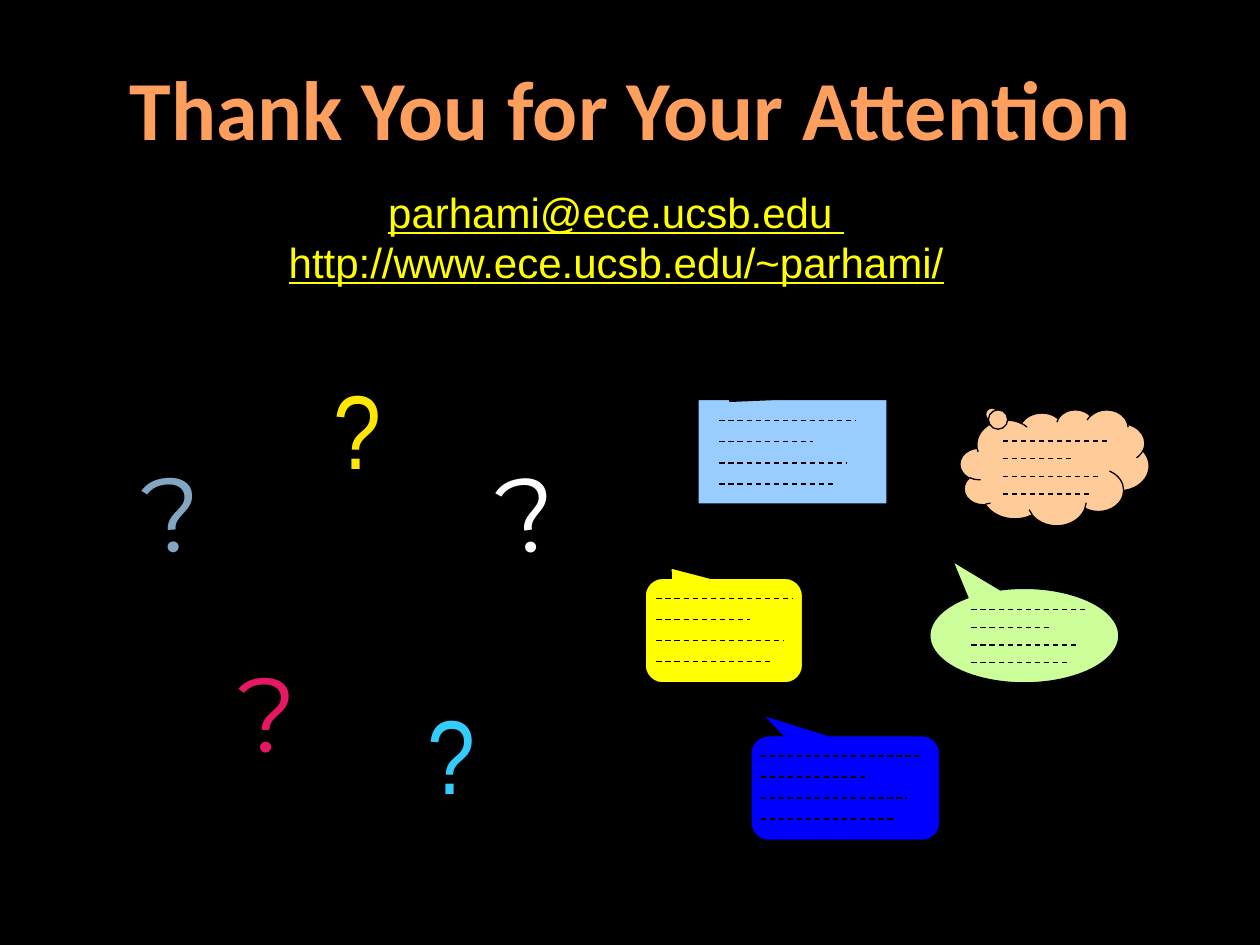
from pptx import Presentation
from pptx import util as u
from pptx.dml.color import RGBColor
from pptx.enum import dml, shapes, text
from pptx.oxml.ns import qn
from lxml import etree

COLORS = {
    "black": "000000", "white": "FFFFFF", "orange": "FF9F5D",
    "yellow": "FFFF00", "gold": "FFE701", "cyan": "33CCFF",
    "pink": "E81766", "steel": "83A7C3", "sky": "99CCFF",
    "lime": "CCFF99", "peach": "FFCC99", "blue": "0000FF",
}
# Length of each dashed line as a share of the longest one
LINE_SHARES = (1, 0.69, 0.93, 0.84)

SHAPE = shapes.MSO_SHAPE
# kind, box, adjustments, fill, first line (left, top, longest, gap)
CALLOUTS = [
    (SHAPE.RECTANGULAR_CALLOUT, (5.54, 3.17, 1.5, 0.83),
     (-0.331, -0.481), "sky", (5.71, 3.34, 1.08, 0.167)),
    (SHAPE.OVAL_CALLOUT, (7.38, 4.67, 1.5, 0.75),
     (-0.378, -0.787), "lime", (7.71, 4.84, 0.91, 0.14)),
    (SHAPE.CLOUD_CALLOUT, (7.62, 3.25, 1.5, 0.92),
     (-0.337, -0.466), "peach", (7.96, 3.5, 0.83, 0.14)),
    (SHAPE.ROUNDED_RECTANGULAR_CALLOUT, (5.12, 4.59, 1.25, 0.83),
     (-0.336, -0.6, 0.167), "yellow", (5.21, 4.75, 1.08, 0.167)),
    (SHAPE.ROUNDED_RECTANGULAR_CALLOUT, (5.96, 5.84, 1.5, 0.83),
     (-0.438, -0.7, 0.167), "blue", (6.04, 6, 1.25, 0.167)),
]
# box, font, color, rotation
QUESTION_MARKS = [
    ((3.71, 3.5, 1, 1.5), "Montserrat", "white", 351.6),
    ((2.38, 2.84, 0.92, 1.56), "Arial Narrow", "gold", 0),
    ((3.12, 5.42, 0.92, 1.26), "Arial Narrow", "cyan", 0),
    ((1.62, 5.09, 1, 1.42), "Montserrat", "pink", 0),
    ((0.88, 3.5, 1, 1.5), "Montserrat", "steel", 355.4),
]


def rgb(name):
    return RGBColor.from_string(COLORS[name])


class SlideBuilder:
    def __init__(self, slide):
        self.slide = slide
        self.line_width = u.Pt(0.75)

    def background(self, color):
        fill = self.slide.background.fill
        fill.solid()
        fill.fore_color.rgb = rgb(color)

    def text(self, box, lines, font, size, color, bold=False,
             underline=False, wrap=True, rotation=0):
        shape = self.slide.shapes.add_textbox(*map(u.Inches, box))
        shape.rotation = rotation
        frame = shape.text_frame
        frame.word_wrap = wrap
        for index, line in enumerate(lines):
            paragraph = frame.add_paragraph() if index else frame.paragraphs[0]
            paragraph.alignment = text.PP_ALIGN.CENTER
            run = paragraph.add_run()
            run.text = line
            run.font.name = font
            run.font.size = u.Pt(size)
            run.font.bold = bold
            run.font.underline = underline
            run.font.color.rgb = rgb(color)

    def callout(self, kind, box, adjustments, color):
        shape = self.slide.shapes.add_shape(kind, *map(u.Inches, box))
        shape.shadow.inherit = False
        for index, value in enumerate(adjustments):
            shape.adjustments[index] = value
        shape.fill.solid()
        shape.fill.fore_color.rgb = rgb(color)
        shape.line.color.rgb = rgb("black")
        shape.line.width = self.line_width

    def dashed_line(self, left, top, length):
        line = self.slide.shapes.add_connector(
            shapes.MSO_CONNECTOR.STRAIGHT,
            *map(u.Inches, (left, top, left + length, top)))
        line.line.color.rgb = rgb("black")
        line.line.width = self.line_width
        line.line.dash_style = dml.MSO_LINE.DASH
        properties = line._element.find(qn("p:spPr"))
        etree.SubElement(properties, qn("a:effectLst"))

    def dashed_lines(self, left, top, longest, gap):
        for row, share in enumerate(LINE_SHARES):
            self.dashed_line(left, top + row * gap, longest * share)


def main():
    presentation = Presentation()
    presentation.slide_width = u.Inches(10)
    presentation.slide_height = u.Inches(7.5)
    slide = presentation.slides.add_slide(presentation.slide_layouts[6])
    builder = SlideBuilder(slide)

    builder.background("black")
    builder.text((0.3, 0.4, 9.41, 1.03), ["Thank You for Your Attention"],
                 "Calibri", 48, "orange", bold=True)
    for kind, box, adjustments, color, lines in CALLOUTS:
        builder.callout(kind, box, adjustments, color)
        builder.dashed_lines(*lines)
    for box, font, color, rotation in QUESTION_MARKS:
        builder.text(box, ["?"], font, 60, color, wrap=False,
                     rotation=rotation)
    builder.text((1.93, 1.43, 5.92, 0.91),
                 ["parhami@ece.ucsb.edu ", "http://www.ece.ucsb.edu/~parhami/"],
                 "Arial", 24, "yellow", underline=True)

    presentation.save("out.pptx")


if __name__ == "__main__":
    main()
